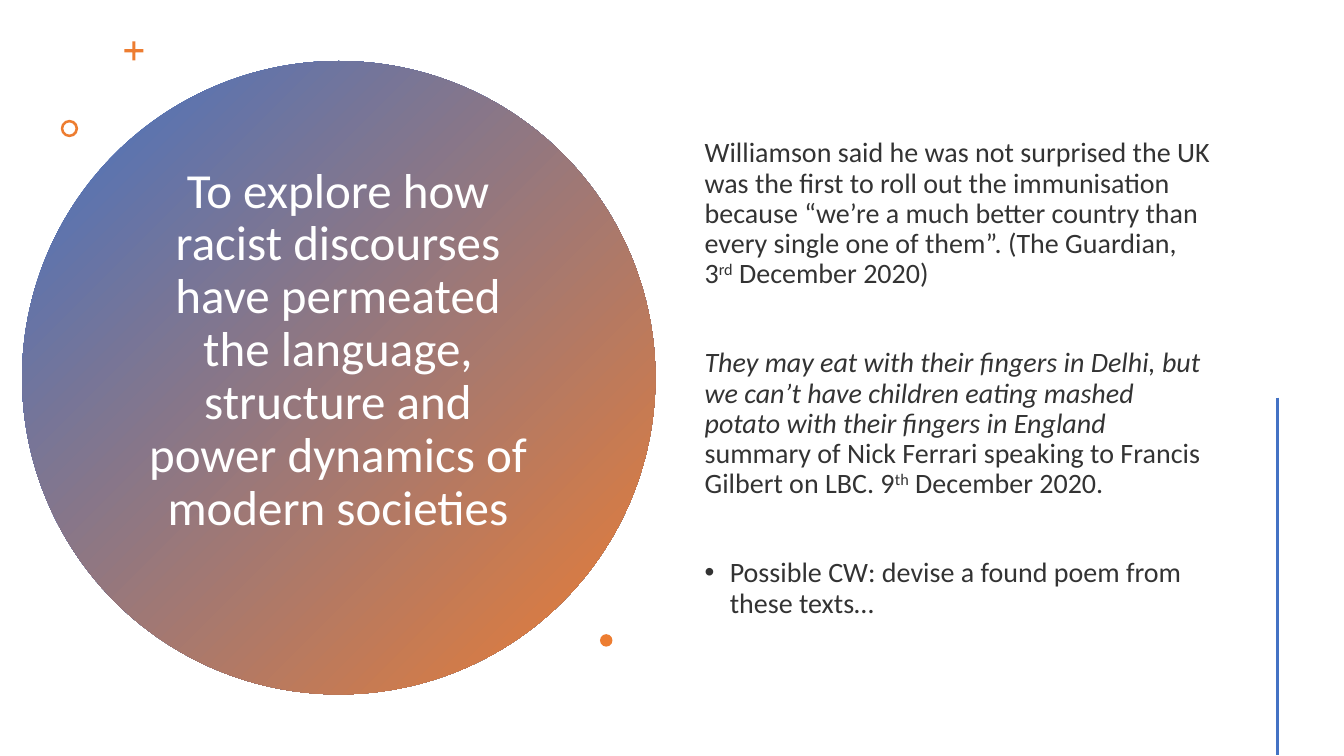
"""Build the slide on racist discourses: gradient circle title, quotations and accents."""
from lxml.etree import SubElement
from pptx import Presentation
from pptx.dml.color import RGBColor
from pptx.enum.shapes import MSO_CONNECTOR as CONN, MSO_SHAPE as SHAPE
from pptx.enum.text import MSO_ANCHOR as ANCHOR, MSO_AUTO_SIZE as AUTO, PP_ALIGN as ALIGN
from pptx.oxml.ns import qn
from pptx.util import Pt

WHITE = RGBColor(0xFF, 0xFF, 0xFF)
BLUE = RGBColor(0x44, 0x72, 0xC4)
ORANGE = RGBColor(0xED, 0x7D, 0x31)
DARK = RGBColor(0x33, 0x33, 0x33)
FONT = "Calibri"


def place(sp, left, top, width, height):
    for name, value in dict(left=left, top=top, width=width, height=height).items():
        setattr(sp, name, Pt(value))


def add_text(p, text, size, color, style=""):
    r = p.add_run()
    r.text = text
    for name, value in dict(name=FONT, size=Pt(size), italic=style == "italic").items():
        setattr(r.font, name, value)
    r.font.color.rgb = color
    if style == "super":
        r._r.get_or_add_rPr().set("baseline", "30000")


prs = Presentation()
prs.slide_width, prs.slide_height = Pt(960), Pt(540)
s = prs.slides.add_slide(prs.slide_layouts[1])
title, body = s.shapes.title, s.placeholders[1]

circle = s.shapes.add_shape(SHAPE.OVAL, Pt(15.8), Pt(43.6), Pt(452.4), Pt(452.4))
circle.shadow.inherit = False
circle.line.fill.background()
circle.fill.gradient()
circle.fill.gradient_angle = 315
for stop, color in zip(circle.fill.gradient_stops, (BLUE, ORANGE)):
    stop.color.rgb = color
title._element.addprevious(circle._element)

place(title, 97.9, 101.5, 287.3, 336.2)
place(body, 496.1, 41, 375.8, 459.4)
for sp in (title, body):
    settings = dict(word_wrap=True, auto_size=AUTO.NONE, vertical_anchor=ANCHOR.MIDDLE)
    for name, value in settings.items():
        setattr(sp.text_frame, name, value)

title.text_frame.margin_bottom = Pt(41.4)
p = title.text_frame.paragraphs[0]
p.alignment = ALIGN.CENTER
p.line_spacing = 0.9
add_text(p, "To explore how racist discourses have permeated the language, "
            "structure and power dynamics of modern societies", 35, WHITE)

quotes = [
    [("Williamson said he was not surprised the UK was the first to roll out the "
      "immunisation because “we’re a much better country than every single one of "
      "them”. (The Guardian, 3", ""), ("rd", "super"), (" December 2020)", "")],
    [("They may eat with their fingers in Delhi, but we can’t have children eating "
      "mashed potato with their fingers in England ", "italic"),
     ("summary of Nick Ferrari speaking to Francis Gilbert on LBC. 9", ""),
     ("th", "super"), (" December 2020.", "")],
    [("Possible CW: devise a found poem from these texts…", "")],
]
tf = body.text_frame
for i, runs in enumerate(quotes):
    p = tf.add_paragraph() if i else tf.paragraphs[0]
    bulleted = i == len(quotes) - 1
    pPr = p._p.get_or_add_pPr()
    indent = Pt(18) if bulleted else 0
    pPr.set("marL", str(indent))
    pPr.set("indent", str(-indent))
    if bulleted:
        SubElement(pPr, qn("a:buFont"), typeface="Arial")
        SubElement(pPr, qn("a:buChar"), char="•")
    else:
        SubElement(pPr, qn("a:buNone"))
    p.line_spacing = 0.9
    p.space_before = Pt(42 if i else 0)
    for text, style in runs:
        add_text(p, text, 20, DARK, style)

accents = [
    (SHAPE.CROSS, 88.9, 29.5, 13.6, 0.42),
    (SHAPE.DONUT, 43.4, 85.6, 12.4, 0.15),
    (SHAPE.OVAL, 428.6, 453, 8.9, None),
]
for kind, left, top, size, adjustment in accents:
    sp = s.shapes.add_shape(kind, Pt(left), Pt(top), Pt(size), Pt(size))
    if adjustment:
        sp.adjustments[0] = adjustment
    sp.shadow.inherit = False
    sp.fill.solid()
    sp.fill.fore_color.rgb = ORANGE
    sp.line.fill.background()

rule = s.shapes.add_connector(CONN.STRAIGHT, Pt(912.4), Pt(284), Pt(912.4), Pt(539.5))
rule.line.color.rgb = BLUE
rule.line.width = Pt(2)
SubElement(rule._element.spPr, qn("a:effectLst"))

prs.save("out.pptx")
